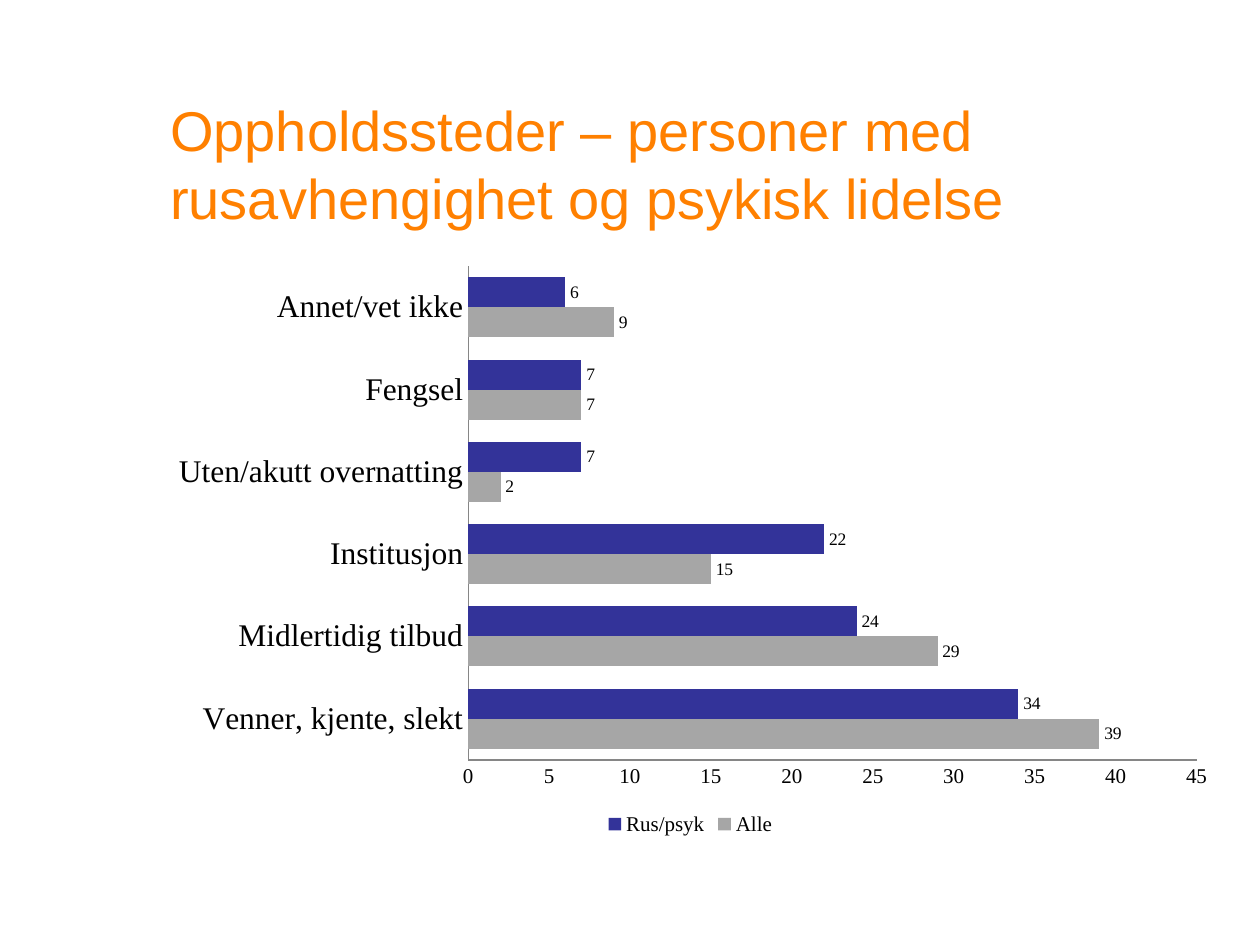
from pptx import Presentation
from pptx.chart.data import CategoryChartData
from pptx.dml.color import RGBColor
from pptx.enum.chart import XL_CHART_TYPE, XL_LABEL_POSITION, XL_LEGEND_POSITION, XL_TICK_MARK
from pptx.enum.text import MSO_ANCHOR, MSO_AUTO_SIZE, PP_ALIGN
from pptx.util import Emu, Pt

EMU_PER_PX = 9144
COLORS = {"title": "FF8000", "text": "000000", "axis": "868686",
          "Alle ": "A6A6A6", "Rus/psyk": "333399"}
PLACES = ["Venner, kjente, slekt", "Midlertidig tilbud", "Institusjon",
          "Uten/akutt overnatting", "Fengsel", "Annet/vet ikke"]
SHARES = {"Alle ": [39, 29, 15, 2, 7, 9], "Rus/psyk": [34, 24, 22, 7, 7, 6]}


def px(length):
    """Turn whole px into EMU."""
    return Emu(length * EMU_PER_PX)


def color(key):
    """Look up a named colour."""
    return RGBColor.from_string(COLORS[key])


def style_font(font, size, face="Times New Roman", ink="text"):
    """Set size, face and colour of a font."""
    font.size = Pt(size)
    font.name = face
    font.bold = False
    font.color.rgb = color(ink)


def write_text(frame, text, *, anchor=MSO_ANCHOR.MIDDLE, align=PP_ALIGN.LEFT, **font_format):
    """Fill a text frame with one formatted paragraph."""
    frame.word_wrap = True
    frame.auto_size = MSO_AUTO_SIZE.NONE
    frame.vertical_anchor = anchor
    paragraph = frame.paragraphs[0]
    paragraph.alignment = align
    run = paragraph.add_run()
    run.text = text
    style_font(run.font, **font_format)


def place_title(slide, text, left, top, width, height):
    """Move the title placeholder and write the heading."""
    heading = slide.shapes.title
    heading.left, heading.top = px(left), px(top)
    heading.width, heading.height = px(width), px(height)
    write_text(heading.text_frame, text, size=32, face="Arial", ink="title")


def style_axis(axis, size):
    """Give an axis a thin line, no ticks and its label font."""
    axis.has_major_gridlines = False
    axis.major_tick_mark = XL_TICK_MARK.NONE
    axis.minor_tick_mark = XL_TICK_MARK.NONE
    axis.format.line.color.rgb = color("axis")
    axis.format.line.width = Pt(0.75)
    style_font(axis.tick_labels.font, size)


def style_series(series):
    """Colour one series and show its values."""
    series.format.fill.solid()
    series.format.fill.fore_color.rgb = color(series.name)
    series.invert_if_negative = False
    labels = series.data_labels
    labels.show_value = True
    labels.position = XL_LABEL_POSITION.OUTSIDE_END
    style_font(labels.font, 10)


def add_bar_chart(slide, left, top, width, height):
    """Add the clustered bars of places to stay."""
    shares = CategoryChartData(number_format="General")
    shares.categories = PLACES
    for group, values in SHARES.items():
        shares.add_series(group, values)
    chart = slide.shapes.add_chart(XL_CHART_TYPE.BAR_CLUSTERED, px(left), px(top),
                                   px(width), px(height), shares).chart
    chart.has_title = False
    style_font(chart.font, 18)
    style_axis(chart.category_axis, 18)
    style_axis(chart.value_axis, 12)
    chart.value_axis.minimum_scale = 0
    chart.value_axis.maximum_scale = 45
    chart.value_axis.major_unit = 5
    bars = chart.plots[0]
    bars.gap_width = 75
    bars.overlap = 0
    bars.vary_by_categories = False
    for series in bars.series:
        style_series(series)
    chart.has_legend = True
    chart.legend.position = XL_LEGEND_POSITION.BOTTOM
    chart.legend.include_in_layout = False
    style_font(chart.legend.font, 12)


def main():
    """Build and save the slide."""
    deck = Presentation()
    deck.slide_width, deck.slide_height = px(1000), px(750)
    slide = deck.slides.add_slide(deck.slide_layouts[5])
    place_title(slide, "Oppholdssteder – personer med rusavhengighet og psykisk lidelse",
                125, 67, 850, 125)
    add_bar_chart(slide, 125, 202, 850, 465)
    deck.save("out.pptx")


if __name__ == "__main__":
    main()
